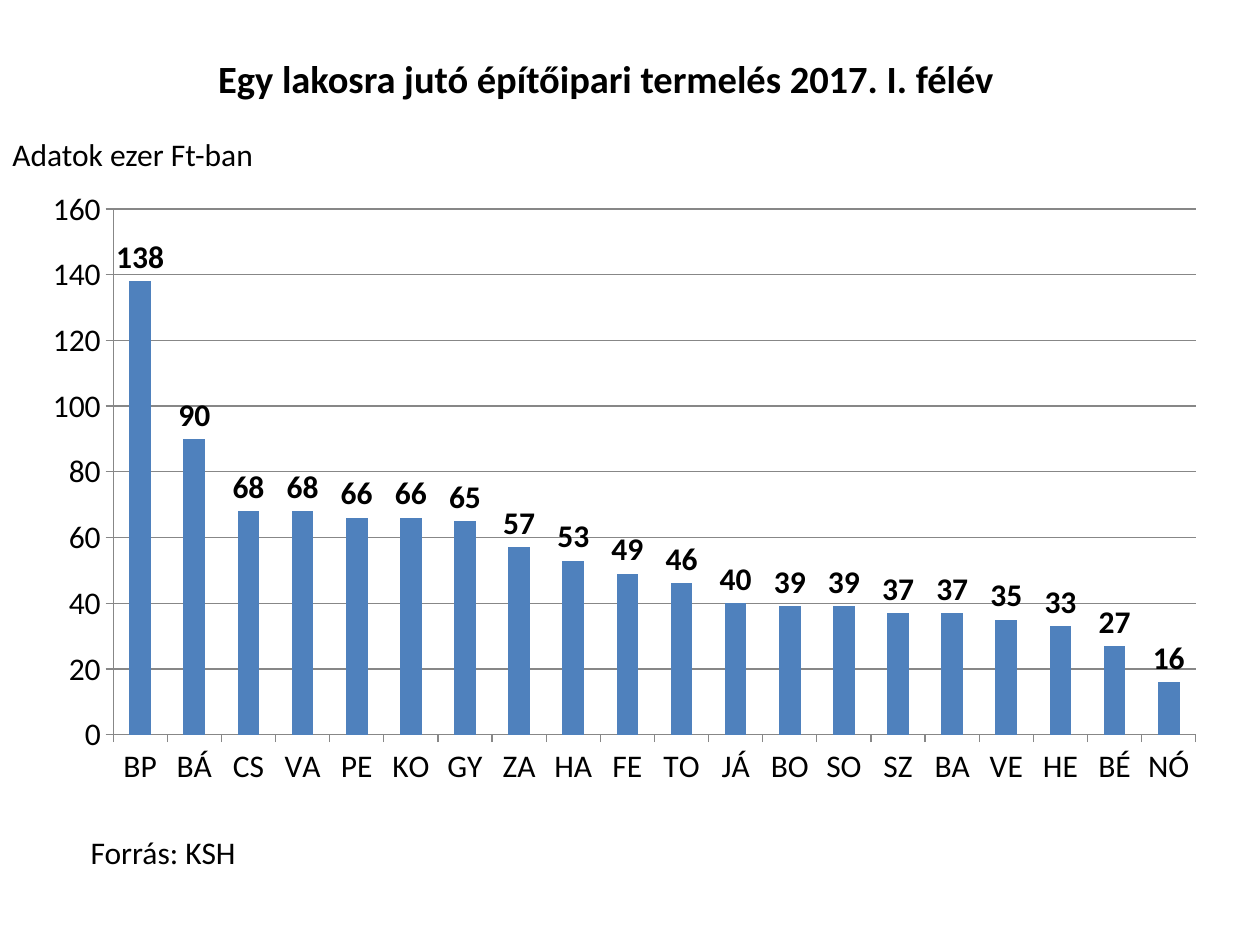
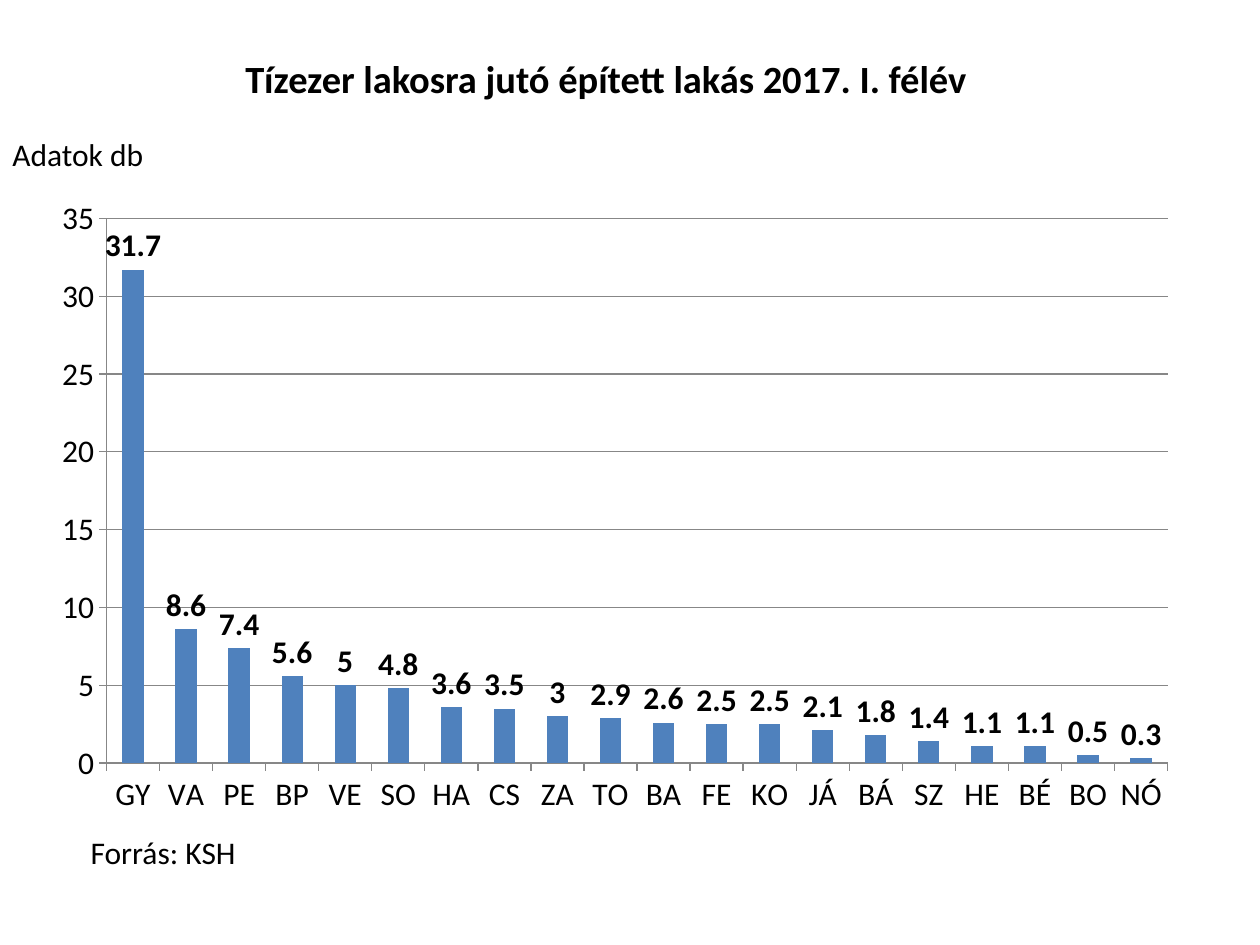
from pptx import Presentation
from pptx.chart.data import CategoryChartData
from pptx.dml.color import RGBColor
from pptx.enum.chart import XL_CHART_TYPE, XL_LABEL_POSITION, XL_TICK_MARK
from pptx.enum.text import MSO_ANCHOR, PP_ALIGN
from pptx.util import Inches, Pt

COLUMNS = XL_CHART_TYPE.COLUMN_CLUSTERED
OUTSIDE_END = XL_LABEL_POSITION.OUTSIDE_END
TICK_OUT = XL_TICK_MARK.OUTSIDE
TOP = MSO_ANCHOR.TOP
LEFT, CENTER = PP_ALIGN.LEFT, PP_ALIGN.CENTER

SLIDE_W, SLIDE_H = Inches(10), Inches(7.5)
TITLE_ONLY = 5
FONT = "Calibri"
TITLE_SIZE, BODY_SIZE = Pt(22), Pt(18)
COLORS = {"text": "000000", "bar": "4F81BD", "grid": "878787"}

# Left, top, width, height in inches
TITLE_BOX = (1.41, 0.39, 6.8, 0.47)
UNIT_BOX = (0, 1.02, 2.42, 0.4)
SOURCE_BOX = (0.62, 6.56, 3.52, 0.4)

SOURCE = "Forrás: KSH"
CONSTRUCTION = {
    "BP": 138, "BÁ": 90, "CS": 68, "VA": 68, "PE": 66, "KO": 66, "GY": 65,
    "ZA": 57, "HA": 53, "FE": 49, "TO": 46, "JÁ": 40, "BO": 39, "SO": 39,
    "SZ": 37, "BA": 37, "VE": 35, "HE": 33, "BÉ": 27, "NÓ": 16,
}
DWELLINGS = {
    "GY": 31.7, "VA": 8.6, "PE": 7.4, "BP": 5.6, "VE": 5, "SO": 4.8, "HA": 3.6,
    "CS": 3.5, "ZA": 3, "TO": 2.9, "BA": 2.6, "FE": 2.5, "KO": 2.5, "JÁ": 2.1,
    "BÁ": 1.8, "SZ": 1.4, "HE": 1.1, "BÉ": 1.1, "BO": 0.5, "NÓ": 0.3,
}


def color(name):
    return RGBColor.from_string(COLORS[name])


def style_font(font, size, bold=False):
    font.name, font.size, font.bold = FONT, size, bold
    font.color.rgb = color("text")


def write(shape, text, size, bold=False, align=LEFT):
    frame = shape.text_frame
    frame.word_wrap = True
    frame.vertical_anchor = TOP
    paragraph = frame.paragraphs[0]
    paragraph.alignment = align
    run = paragraph.add_run()
    run.text = text
    style_font(run.font, size, bold)


def add_title(slide, text):
    title = slide.shapes.title
    title.left, title.top, title.width, title.height = map(Inches, TITLE_BOX)
    write(title, text, TITLE_SIZE, bold=True, align=CENTER)


def add_note(slide, box, text):
    write(slide.shapes.add_textbox(*map(Inches, box)), text, BODY_SIZE)


def style_axis(axis, top=None, step=None):
    axis.major_tick_mark = TICK_OUT
    axis.format.line.color.rgb = color("grid")
    axis.format.line.width = Pt(0.75)
    style_font(axis.tick_labels.font, BODY_SIZE)
    axis.has_major_gridlines = top is not None
    if top is not None:
        axis.minimum_scale, axis.maximum_scale, axis.major_unit = 0, top, step
        grid_line = axis.major_gridlines.format.line
        grid_line.color.rgb = color("grid")
        grid_line.width = Pt(0.75)


def add_county_chart(slide, box, counties, top, step):
    """Column chart of one value per county, labelled above each column."""
    data = CategoryChartData()
    data.categories = list(counties)
    data.add_series("Series 1", list(counties.values()))
    chart = slide.shapes.add_chart(COLUMNS, *map(Inches, box), data).chart
    style_font(chart.font, Pt(10))
    chart.has_legend = False
    chart.has_title = False
    style_axis(chart.category_axis)
    style_axis(chart.value_axis, top, step)

    plot = chart.plots[0]
    plot.gap_width = 150
    plot.vary_by_categories = False
    bar_fill = plot.series[0].format.fill
    bar_fill.solid()
    bar_fill.fore_color.rgb = color("bar")
    labels = plot.series[0].data_labels
    labels.show_value = True
    labels.position = OUTSIDE_END
    style_font(labels.font, BODY_SIZE, bold=True)


def add_county_slide(prs, title, unit, box, counties, top, step):
    slide = prs.slides.add_slide(prs.slide_layouts[TITLE_ONLY])
    add_title(slide, title)
    add_note(slide, UNIT_BOX, unit)
    add_note(slide, SOURCE_BOX, SOURCE)
    add_county_chart(slide, box, counties, top, step)


def main():
    prs = Presentation()
    prs.slide_width, prs.slide_height = SLIDE_W, SLIDE_H
    add_county_slide(prs, "Egy lakosra jutó építőipari termelés 2017. I. félév",
                     "Adatok ezer Ft-ban", (0.23, 1.41, 9.45, 4.92),
                     CONSTRUCTION, top=160, step=20)
    add_county_slide(prs, "Tízezer lakosra jutó épített lakás 2017. I. félév",
                     "Adatok db", (0.31, 1.48, 9.14, 5.08),
                     DWELLINGS, top=35, step=5)
    prs.save("out.pptx")


if __name__ == "__main__":
    main()
